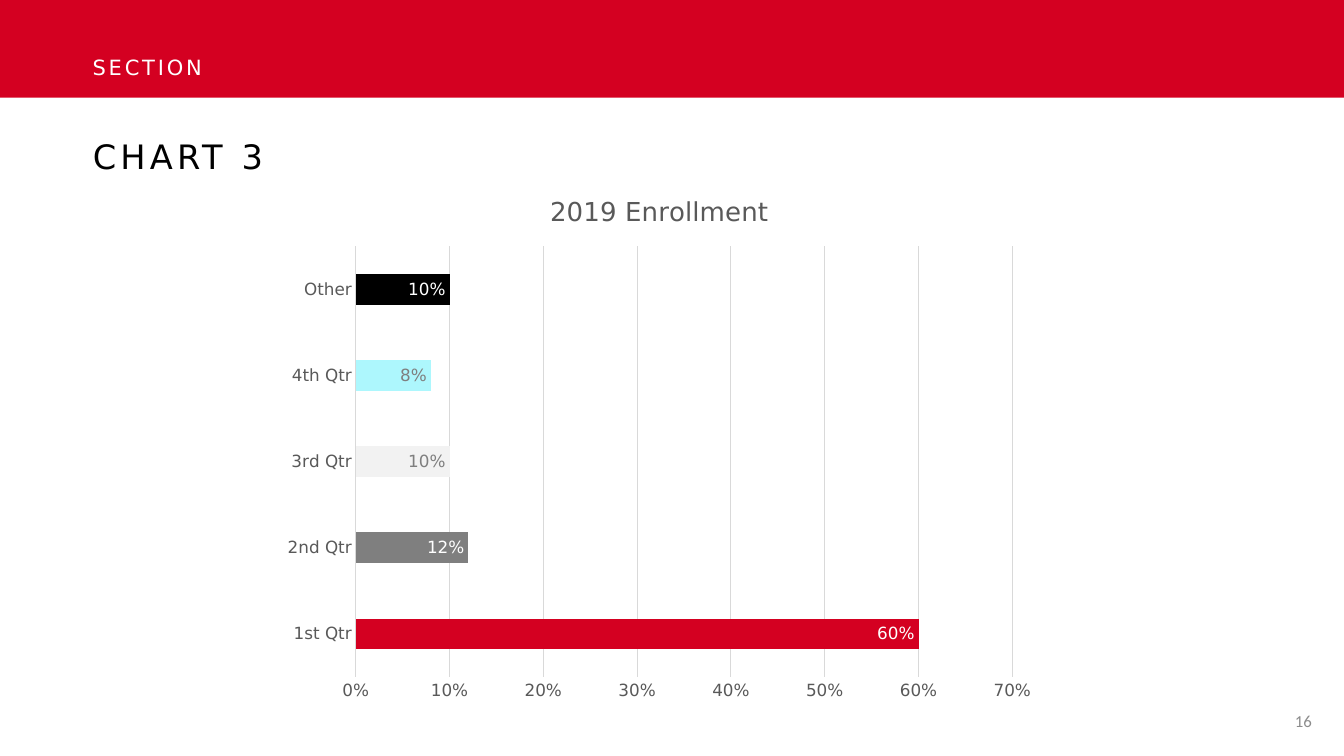
from pptx import Presentation
from pptx.chart.data import CategoryChartData
from pptx.dml.color import RGBColor
from pptx.enum.chart import XL_CHART_TYPE, XL_LABEL_POSITION, XL_TICK_MARK
from pptx.enum.shapes import MSO_SHAPE
from pptx.enum.text import MSO_ANCHOR, PP_ALIGN
from pptx.util import Inches, Pt

BAR_CLUSTERED = XL_CHART_TYPE.BAR_CLUSTERED
INSIDE_END = XL_LABEL_POSITION.INSIDE_END
NO_TICK = XL_TICK_MARK.NONE
TOP, MIDDLE = MSO_ANCHOR.TOP, MSO_ANCHOR.MIDDLE
LEFT, RIGHT = PP_ALIGN.LEFT, PP_ALIGN.RIGHT

COLORS = {
    "red": "D40021", "white": "FFFFFF", "black": "000000", "gray": "7F7F7F",
    "pale": "F2F2F2", "cyan": "ADF7FD", "text": "595959", "grid": "D9D9D9",
    "number": "8C8C8C",
}
FONT = "DejaVu Sans"
MARGIN = 0.82


def color(name):
    return RGBColor.from_string(COLORS[name])


def style_font(font, size, color_name, face=FONT):
    font.size = Pt(size)
    font.name = face
    font.bold = False
    font.color.rgb = color(color_name)


deck = Presentation()
deck.slide_width, deck.slide_height = Inches(13.33), Inches(7.5)
slide = deck.slides.add_slide(deck.slide_layouts[5])

# Header band
band = slide.shapes.add_shape(MSO_SHAPE.RECTANGLE, 0, 0, deck.slide_width, Inches(0.97))
band.shadow.inherit = False
band.fill.solid()
band.fill.fore_color.rgb = color("red")
band.line.fill.background()

# Section name, title and page number
section = slide.shapes.add_textbox(0, 0, 0, 0)
page_number = slide.shapes.add_textbox(0, 0, 0, 0)
texts = [
    (section, (MARGIN, 0.49, 4.95, 0.4), "SECTION", 15, "white", FONT, 2, LEFT, TOP),
    (slide.shapes.title, (MARGIN, 1.3, 5.68, 0.41), "CHART 3", 24, "black", FONT, 3, LEFT, TOP),
    (page_number, (10, 6.95, 3.11, 0.4), "16", 12, "number", "Calibri", 0, RIGHT, MIDDLE),
]
for box, place, wording, size, color_name, face, spacing, align, anchor in texts:
    box.left, box.top, box.width, box.height = map(Inches, place)
    frame = box.text_frame
    frame.text = wording
    frame.word_wrap = True
    frame.vertical_anchor = anchor
    para = frame.paragraphs[0]
    para.alignment = align
    span = para.runs[0]
    style_font(span.font, size, color_name, face)
    span.font._element.set("spc", str(spacing * 100))

# Enrollment chart: category, share, bar color, label color
quarters = [
    ("1st Qtr", 0.6, "red", "white"),
    ("2nd Qtr", 0.12, "gray", "white"),
    ("3rd Qtr", 0.1, "pale", "gray"),
    ("4th Qtr", 0.08, "cyan", "gray"),
    ("Other", 0.1, "black", "white"),
]
enrollment = CategoryChartData(number_format="0%")
enrollment.categories = [quarter[0] for quarter in quarters]
enrollment.add_series("2019 Enrollment", [quarter[1] for quarter in quarters])
chart = slide.shapes.add_chart(
    BAR_CLUSTERED, Inches(2.7), Inches(1.72), Inches(7.68), Inches(5.34), enrollment
).chart
style_font(chart.font, 10, "black")
chart.has_legend = False
chart.has_title = True
chart.chart_title.include_in_layout = False
heading = chart.chart_title.text_frame
heading.text = "2019 Enrollment"
style_font(heading.paragraphs[0].runs[0].font, 18.6, "text")

category_axis, value_axis = chart.category_axis, chart.value_axis
for axis in (category_axis, value_axis):
    axis.major_tick_mark = axis.minor_tick_mark = NO_TICK
    style_font(axis.tick_labels.font, 12, "text")
value_axis.minimum_scale, value_axis.maximum_scale = 0, 0.7
value_axis.major_unit = 0.1
value_axis.tick_labels.number_format = "0%"
value_axis.tick_labels.number_format_is_linked = False
value_axis.format.line.fill.background()
value_axis.has_major_gridlines = True
for line in (category_axis.format.line, value_axis.major_gridlines.format.line):
    line.color.rgb = color("grid")
    line.width = Pt(0.75)

plot = chart.plots[0]
plot.gap_width = 182
plot.vary_by_categories = False
series = plot.series[0]
series.invert_if_negative = False
series.format.fill.solid()
series.format.fill.fore_color.rgb = color("red")
labels = series.data_labels
labels.show_value = True
labels.number_format = "0%"
labels.number_format_is_linked = False
labels.position = INSIDE_END
style_font(labels.font, 12, "text")
for index, (_, _, bar_color, label_color) in enumerate(quarters):
    point = series.points[index]
    point.format.fill.solid()
    point.format.fill.fore_color.rgb = color(bar_color)
    style_font(point.data_label.font, 12, label_color)
    point.data_label.position = INSIDE_END

deck.save("out.pptx")
